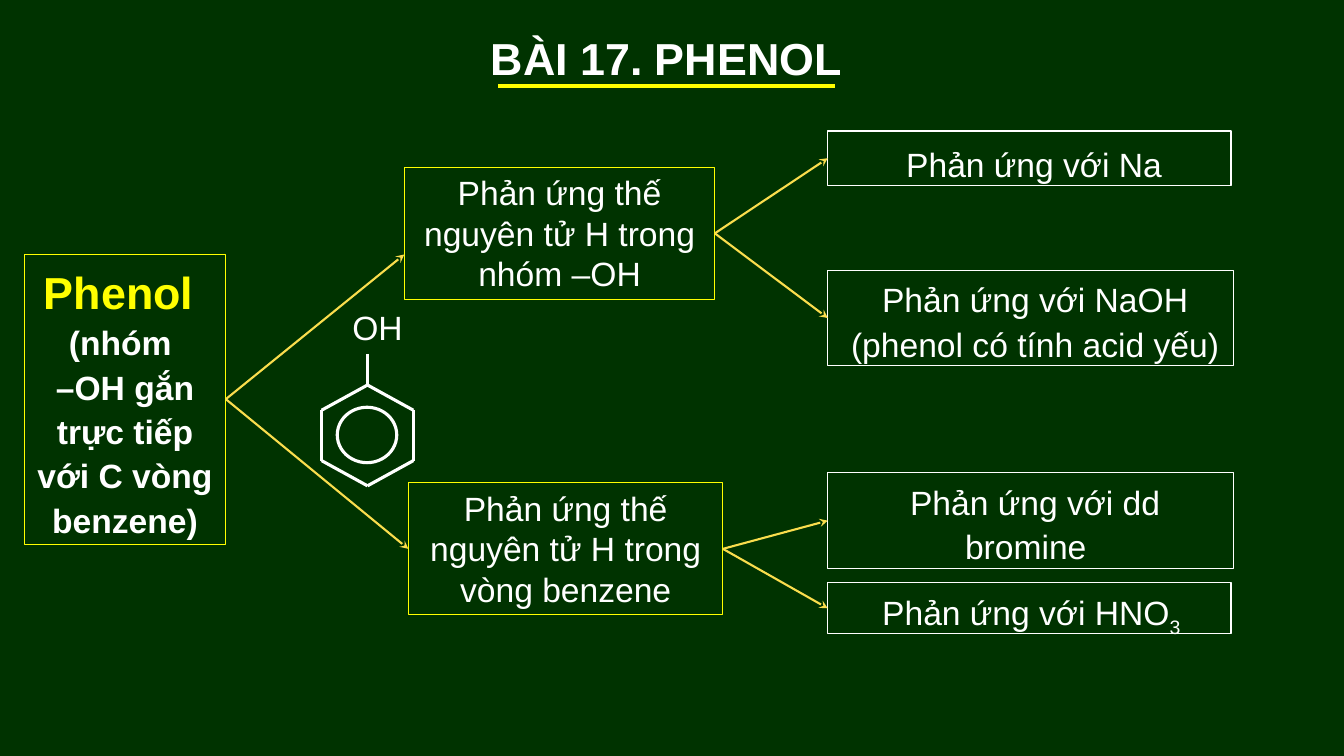
from itertools import pairwise

from lxml.etree import SubElement
from pptx import Presentation
from pptx.dml.color import RGBColor
from pptx.enum.shapes import MSO_CONNECTOR, MSO_SHAPE
from pptx.enum.text import MSO_ANCHOR, PP_ALIGN
from pptx.oxml.ns import qn
from pptx.util import Inches, Pt

COLORS = {"board": "003300", "chalk": "FFFFFF", "accent": "FFFF00", "arrow": "FADD4D"}
FONT = "Arial"


def rgb(name):
    """Return the named colour."""
    return RGBColor.from_string(COLORS[name])


def write_text(frame, paragraphs, color="chalk", size=24, bold=False,
               align=PP_ALIGN.CENTER, spacing=1.0, inset=(0.1, 0.05), wrap=True):
    """Fill a frame with paragraphs, each a list of (text, run overrides)."""
    frame.word_wrap = wrap
    frame.vertical_anchor = MSO_ANCHOR.TOP
    frame.margin_left = frame.margin_right = Inches(inset[0])
    frame.margin_top = frame.margin_bottom = Inches(inset[1])
    for index, runs in enumerate(paragraphs):
        paragraph = frame.paragraphs[0] if index == 0 else frame.add_paragraph()
        paragraph.alignment = align
        paragraph.line_spacing = spacing
        for text, overrides in runs:
            run = paragraph.add_run()
            run.text = text
            run.font.name = FONT
            run.font.size = Pt(overrides.get("size", size))
            run.font.bold = bold
            run.font.color.rgb = rgb(overrides.get("color", color))
            if "baseline" in overrides:
                run.font._element.set("baseline", str(overrides["baseline"]))


def draw_line(slide, start, end, color="chalk", width=2.25, arrow=False):
    """Draw a straight line, with a stealth head at its end if asked."""
    line = slide.shapes.add_connector(
        MSO_CONNECTOR.STRAIGHT, *(Inches(value) for value in (*start, *end)))
    line.line.color.rgb = rgb(color)
    line.line.width = Pt(width)
    if arrow:
        SubElement(line.line._get_or_add_ln(), qn("a:tailEnd"), type="stealth")
    SubElement(line._element.spPr, qn("a:effectLst"))


def draw_outline(slide, preset, box, color, width):
    """Draw an unfilled shape and return it."""
    outline = slide.shapes.add_shape(preset, *(Inches(value) for value in box))
    outline.shadow.inherit = False
    outline.fill.background()
    outline.line.color.rgb = rgb(color)
    outline.line.width = Pt(width)
    return outline


def draw_node(slide, box, paragraphs, border="chalk", **text_format):
    """Draw one framed node of the concept map."""
    node = draw_outline(slide, MSO_SHAPE.RECTANGLE, box, border, 0.75)
    write_text(node.text_frame, paragraphs, **text_format)


def draw_arrow(slide, source, target, drop=0.5):
    """Link the right middle of one box to the left edge of another."""
    left, top, width, height = source
    draw_line(slide, (left + width, top + height / 2),
              (target[0], target[1] + target[3] * drop), "arrow", 1.5, arrow=True)


def draw_heading(slide, box):
    """Place the title and its underline."""
    left, top, width, height = box
    title = slide.shapes.title
    title.left, title.top, title.width, title.height = (Inches(value) for value in box)
    write_text(title.text_frame, [[("BÀI 17. PHENOL", {})]], size=32, bold=True)
    middle = left + width / 2
    draw_line(slide, (middle - 1.67, top + 0.6), (middle + 1.67, top + 0.6), "accent", 3)


def draw_phenol(slide, box):
    """Draw the phenol ring with its hydroxyl group inside the box."""
    left, top, width, height = box
    center = left + width / 2
    ring_top = top + 0.78
    bottom = top + height
    right = left + width
    corners = [(center, ring_top), (right, ring_top + 0.25), (right, bottom - 0.25),
               (center, bottom), (left, bottom - 0.25), (left, ring_top + 0.25)]
    for start, end in pairwise(corners + corners[:1]):
        draw_line(slide, start, end)
    draw_outline(slide, MSO_SHAPE.OVAL, (center - 0.3, ring_top + 0.22, 0.59, 0.55),
                 "chalk", 2.25)
    draw_line(slide, (center, ring_top - 0.31), (center, ring_top))
    hydroxyl = slide.shapes.add_textbox(
        Inches(center - 0.15), Inches(top), Inches(0.51), Inches(0.4))
    write_text(hydroxyl.text_frame, [[("OH", {})]], align=PP_ALIGN.LEFT,
               inset=(0, 0), wrap=False)


def draw_concept_map(slide):
    """Draw the phenol node, its two branches and their reactions."""
    phenol = (0.24, 2.52, 2, 2.88)
    draw_node(slide, phenol, [
        [("Phenol ", {"size": 32, "color": "accent"})],
        [("(nhóm ", {})],
        [("–OH gắn trực tiếp với C vòng benzene)", {})],
    ], border="accent", bold=True, spacing=1.1)
    branches = [
        ((4.01, 1.66, 3.08, 1.31), "Phản ứng thế nguyên tử H trong nhóm –OH", 0.66, [
            ((8.21, 1.3, 4, 0.54), [[(" Phản ứng với Na", {})]], 1.2),
            ((8.21, 2.68, 4.02, 0.95), [[(" Phản ứng với NaOH", {})],
                                        [(" (phenol có tính acid yếu)", {})]], 1.1),
        ]),
        ((4.05, 4.79, 3.12, 1.31), "Phản ứng thế nguyên tử H trong vòng benzene", 0.5, [
            ((8.21, 4.69, 4.02, 0.95), [[(" Phản ứng với dd bromine ", {})]], 1.1),
            ((8.21, 5.78, 4, 0.51), [[(" Phản ứng với HNO", {}),
                                      ("3 ", {"baseline": -25000})]], 1.1),
        ]),
    ]
    for branch, label, drop, reactions in branches:
        draw_node(slide, branch, [[(label, {})]], border="accent")
        draw_arrow(slide, phenol, branch, drop)
        for reaction, paragraphs, spacing in reactions:
            draw_node(slide, reaction, paragraphs, spacing=spacing)
            draw_arrow(slide, branch, reaction)


def main():
    """Build the slide and save it."""
    deck = Presentation()
    deck.slide_width, deck.slide_height = Inches(13.33), Inches(7.5)
    slide = deck.slides.add_slide(deck.slide_layouts[5])
    slide.background.fill.solid()
    slide.background.fill.fore_color.rgb = rgb("board")
    draw_heading(slide, (3.36, 0.25, 6.5, 0.64))
    draw_concept_map(slide)
    draw_phenol(slide, (3.19, 3.04, 0.91, 1.78))
    deck.save("out.pptx")


if __name__ == "__main__":
    main()
